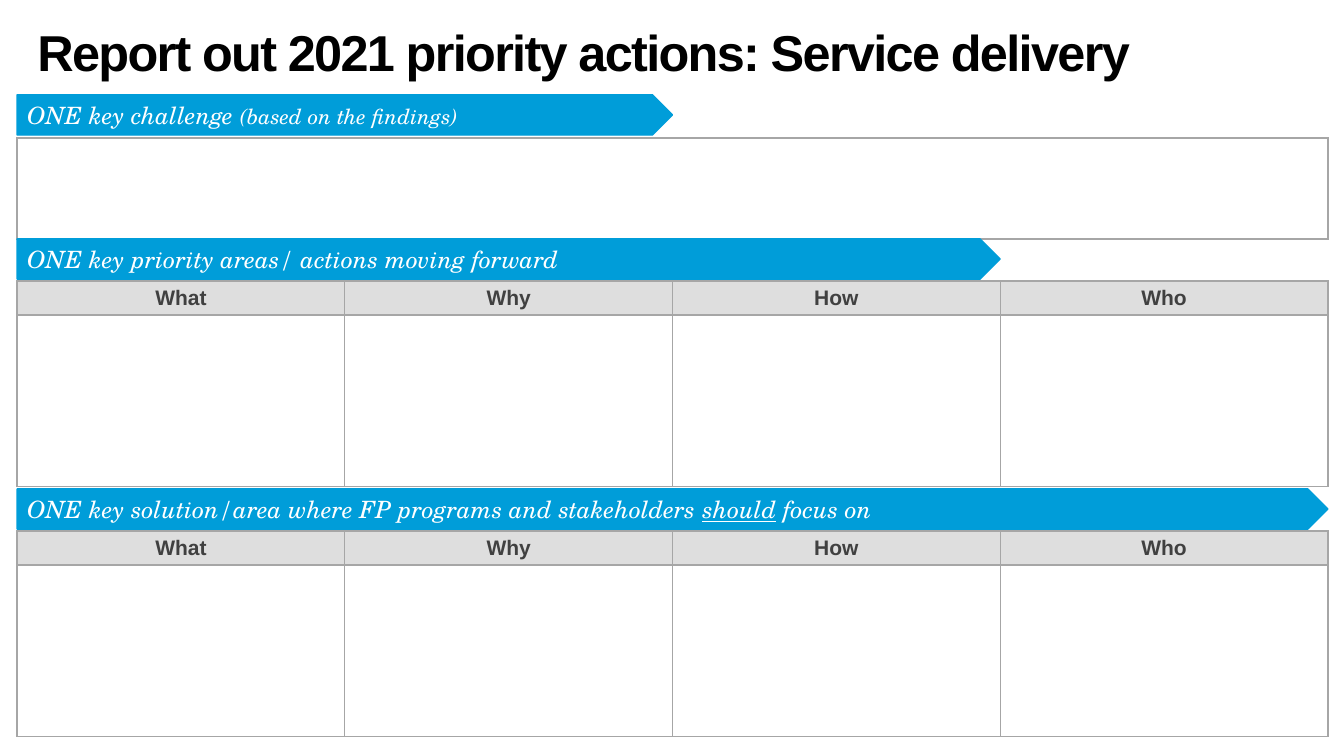
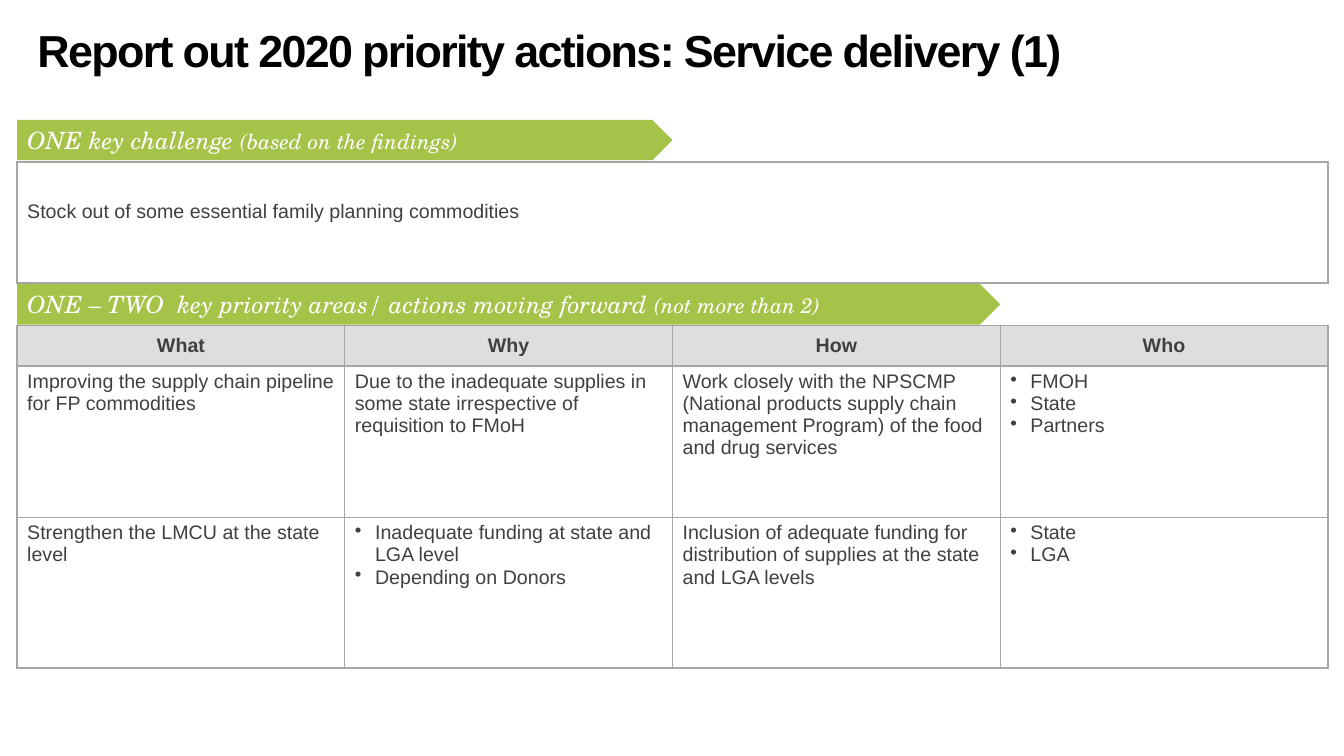
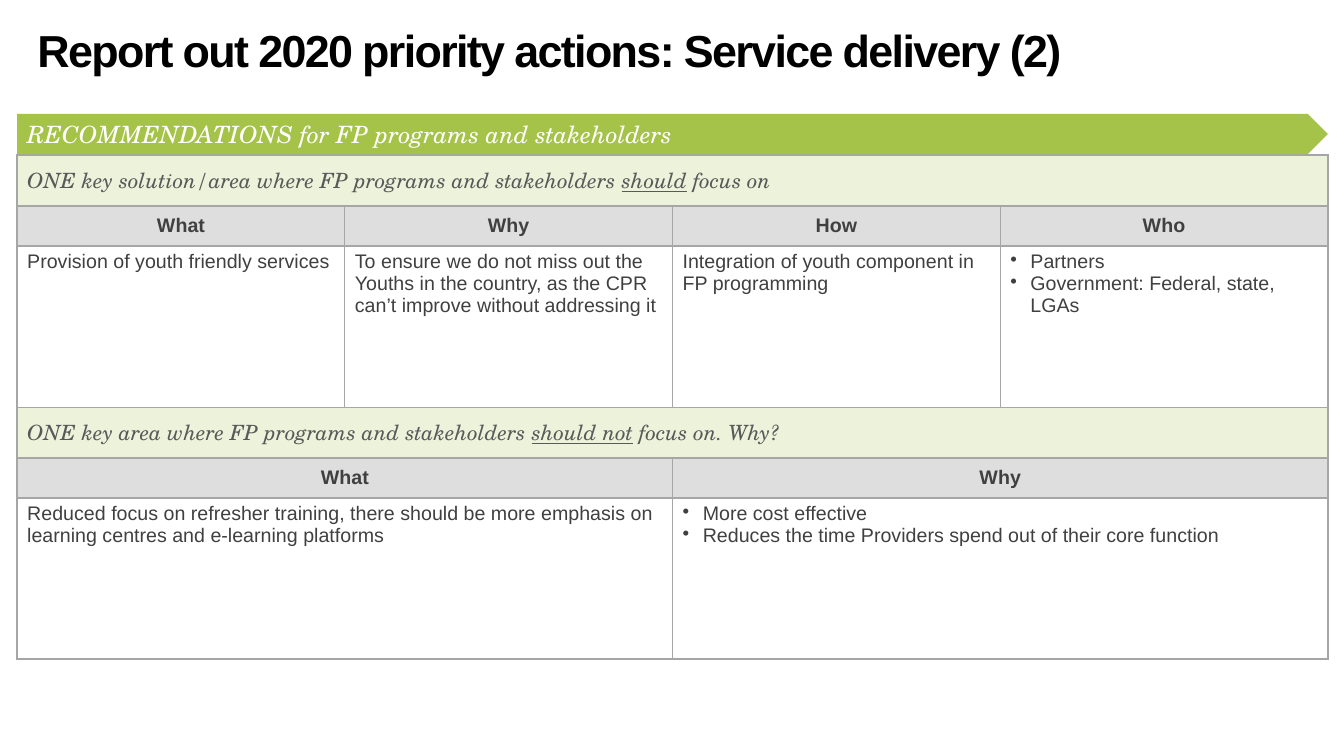
"""Build the report-out slides on service delivery priority actions."""
from dataclasses import dataclass

from lxml.etree import SubElement
from pptx import Presentation
from pptx.dml.color import RGBColor
from pptx.enum.shapes import MSO_SHAPE
from pptx.enum.text import MSO_ANCHOR, MSO_AUTO_SIZE, PP_ALIGN
from pptx.oxml.ns import qn
from pptx.util import Inches, Pt


@dataclass(frozen=True)
class Theme:
    """Colours, fonts and type sizes shared by the slides."""
    ink: str = "000000"
    text: str = "404040"
    muted: str = "595959"
    white: str = "FFFFFF"
    blue: str = "009DD9"
    green: str = "A5C249"
    pale_green: str = "EDF3DB"
    grey: str = "DEDEDE"
    border: str = "A6A6A6"
    sans: str = "Arial"
    serif: str = "TeX Gyre Schola"
    body_size: int = 14
    note_size: int = 15
    banner_size: int = 17
    thick: float = 1.5
    thin: float = 0.75


@dataclass(frozen=True)
class Run:
    """Stretch of text that departs from its paragraph's style."""
    text: str
    size: int = None
    underline: bool = None


@dataclass(frozen=True)
class Row:
    """Table row whose cells share the table's columns equally."""
    kind: str
    height: float
    cells: tuple


THEME = Theme()
LEFT, COLUMN, COLUMNS = 0.17, 3.25, 4
BANNER_HEIGHT = 0.4
HEADINGS = ("What", "Why", "How", "Who")
CHALLENGE = ("ONE key challenge ", Run("(based on the findings)", size=THEME.note_size))
SOLUTION = ("ONE key solution/area where FP programs and stakeholders ",
            Run("should", underline=True), " focus on")
AVOID = ("ONE key area where FP programs and stakeholders ",
         Run("should not", underline=True), " focus on. Why?")
CELL_FILLS = {"head": THEME.grey, "section": THEME.pale_green}


def rgb(code):
    """Turn a hex code into a colour."""
    return RGBColor.from_string(code)


def style_font(paragraph, name, size, color, bold=False, italic=False):
    """Set the font of a whole paragraph."""
    font = paragraph.font
    font.name, font.size, font.bold, font.italic = name, Pt(size), bold, italic
    font.color.rgb = rgb(color)


def add_runs(paragraph, content):
    """Write a string, or a tuple of strings and runs, into a paragraph."""
    for part in (content,) if isinstance(content, str) else content:
        part = Run(part) if isinstance(part, str) else part
        run = paragraph.add_run()
        run.text = part.text
        if part.size:
            run.font.size = Pt(part.size)
        if part.underline:
            run.font.underline = True


def add_bullet(paragraph):
    """Give a paragraph a hanging bullet."""
    properties = paragraph._p.get_or_add_pPr()
    properties.set("marL", str(Inches(0.2)))
    properties.set("indent", str(-Inches(0.2)))
    SubElement(properties, qn("a:buChar")).set("char", "•")


def start_slide(deck, heading, size, top, height):
    """Add a slide with its formatted title."""
    slide = deck.slides.add_slide(deck.slide_layouts[5])
    title = slide.shapes.title
    title.left, title.top = Inches(0.27), Inches(top)
    title.width, title.height = Inches(12.8), Inches(height)
    frame = title.text_frame
    frame.auto_size, frame.word_wrap = MSO_AUTO_SIZE.NONE, True
    frame.vertical_anchor = MSO_ANCHOR.TOP
    paragraph = frame.paragraphs[0]
    paragraph.alignment, paragraph.line_spacing = PP_ALIGN.LEFT, 0.9
    add_runs(paragraph, heading)
    style_font(paragraph, THEME.sans, size, THEME.ink, bold=True)
    paragraph.runs[0]._r.get_or_add_rPr().set("spc", "-120")
    return slide


def add_banner(slide, top, columns, content, color, outlined=False):
    """Add an arrow-shaped section heading spanning some columns."""
    banner = slide.shapes.add_shape(
        MSO_SHAPE.PENTAGON, Inches(LEFT), Inches(top),
        Inches(columns * COLUMN), Inches(BANNER_HEIGHT))
    banner.shadow.inherit = False
    banner.fill.solid()
    banner.fill.fore_color.rgb = rgb(color)
    if outlined:
        banner.line.color.rgb = rgb(color)
        banner.line.width = Pt(1)
    else:
        banner.line.fill.background()
    banner.text_frame.word_wrap = True
    banner.text_frame.vertical_anchor = MSO_ANCHOR.MIDDLE
    paragraph = banner.text_frame.paragraphs[0]
    paragraph.alignment = PP_ALIGN.LEFT
    add_runs(paragraph, content)
    style_font(paragraph, THEME.serif, THEME.banner_size, THEME.white, italic=True)


def set_borders(cell, widths):
    """Draw the left, right, top and bottom borders of a cell."""
    properties = cell._tc.get_or_add_tcPr()
    for side, width in zip("LRTB", widths):
        line = SubElement(properties, qn(f"a:ln{side}"), w=str(Pt(width)))
        fill = SubElement(line, qn("a:solidFill"))
        SubElement(fill, qn("a:srgbClr"), val=THEME.border)


def write_cell(cell, kind, content, head_size):
    """Write a cell's text in the style of its row; a list becomes bullets."""
    cell.vertical_anchor = MSO_ANCHOR.TOP if kind == "body" else MSO_ANCHOR.MIDDLE
    entries = content if isinstance(content, list) else [content]
    for index, entry in enumerate(entries):
        frame = cell.text_frame
        paragraph = frame.add_paragraph() if index else frame.paragraphs[0]
        if isinstance(content, list):
            add_bullet(paragraph)
        add_runs(paragraph, entry)
        if kind == "section":
            style_font(paragraph, THEME.serif, THEME.note_size, THEME.muted, italic=True)
        elif kind == "head":
            paragraph.alignment = PP_ALIGN.CENTER
            style_font(paragraph, THEME.sans, head_size, THEME.text, bold=True)
        else:
            style_font(paragraph, THEME.sans, THEME.body_size, THEME.text)


def add_grid(slide, top, rows, columns=COLUMNS, head_size=THEME.body_size, foot=THEME.thick):
    """Add a bordered table, thick at its edges and below its headings."""
    width = COLUMN * COLUMNS
    table = slide.shapes.add_table(
        len(rows), columns, Inches(LEFT), Inches(top),
        Inches(width), Inches(sum(row.height for row in rows))).table
    table.first_row = table.horz_banding = False
    for column in table.columns:
        column.width = Inches(width / columns)
    above = THEME.thick
    for index, row in enumerate(rows):
        table.rows[index].height = Inches(row.height)
        last = index == len(rows) - 1
        below = foot if last else THEME.thin if row.kind == "body" else THEME.thick
        span = columns // len(row.cells)
        for start, content in zip(range(0, columns, span), row.cells):
            end = start + span - 1
            sides = (THEME.thin if start else THEME.thick,
                     THEME.thin if end < columns - 1 else THEME.thick)
            if span > 1:
                table.cell(index, start).merge(table.cell(index, end))
            for position in range(start, end + 1):
                cell = table.cell(index, position)
                set_borders(cell, (*sides, above, below))
                if row.kind in CELL_FILLS:
                    cell.fill.solid()
                    cell.fill.fore_color.rgb = rgb(CELL_FILLS[row.kind])
                else:
                    cell.fill.background()
            if content:
                write_cell(table.cell(index, start), row.kind, content, head_size)
        above = below
    return table


def build_blank_report(deck):
    """Build the 2021 form, left open for answers."""
    slide = start_slide(deck, "Report out 2021 priority actions: Service delivery",
                        36, 0.23, 0.65)
    add_banner(slide, 0.94, 2, CHALLENGE, THEME.blue, outlined=True)
    add_grid(slide, 1.37, [Row("note", 1, ("",))], columns=1)
    sections = ((2.37, 3, "ONE key priority areas/ actions moving forward"),
                (4.85, 4, SOLUTION))
    for top, columns, heading in sections:
        add_banner(slide, top, columns, heading, THEME.blue, outlined=True)
        add_grid(slide, top + 0.42,
                 [Row("head", 0.3, HEADINGS), Row("body", 1.7, ("",) * COLUMNS)],
                 head_size=THEME.note_size, foot=THEME.thin)


def build_priorities(deck):
    """Build the 2020 challenge and priority actions."""
    slide = start_slide(deck, "Report out 2020 priority actions: Service delivery (1)",
                        32, 0.24, 0.7)
    add_banner(slide, 1.19, 2, CHALLENGE, THEME.green)
    challenge = add_grid(slide, 1.61, [
        Row("note", 1.2, ("Stock out of some essential family planning commodities",)),
    ], columns=1)
    challenge.cell(0, 0).margin_bottom = Inches(0.27)
    add_banner(slide, 2.82, 3, (
        "ONE – TWO  key priority areas/ actions moving forward ",
        Run("(not more than 2)", size=THEME.note_size)), THEME.green)
    add_grid(slide, 3.23, [
        Row("head", 0.4, HEADINGS),
        Row("body", 1.5, (
            "Improving the supply chain pipeline for FP commodities",
            "Due to the inadequate supplies in some state irrespective of  requisition to FMoH",
            "Work closely with the NPSCMP (National products supply chain management "
            "Program) of the food and drug services",
            ["FMOH", "State", "Partners"])),
        Row("body", 1.5, (
            "Strengthen the LMCU at the state level",
            ["Inadequate funding at state and LGA level", "Depending on Donors"],
            "Inclusion of adequate funding for distribution of supplies at the state "
            "and LGA levels",
            ["State", "LGA"])),
    ])


def build_recommendations(deck):
    """Build the 2020 recommendations."""
    slide = start_slide(deck, "Report out 2020 priority actions: Service delivery (2)",
                        32, 0.24, 0.7)
    add_grid(slide, 1.54, [
        Row("section", 0.5, (SOLUTION,)),
        Row("head", 0.4, HEADINGS),
        Row("body", 1.6, (
            "Provision of youth friendly services",
            "To ensure we do not miss out the Youths in the country, as the CPR "
            "can’t improve without addressing it",
            "Integration of youth component in FP programming",
            ["Partners", "Government: Federal, state, LGAs"])),
        Row("section", 0.5, (AVOID,)),
        Row("head", 0.4, HEADINGS[:2]),
        Row("body", 1.6, (
            "Reduced focus on refresher training, there should be more emphasis on "
            "learning centres and e-learning platforms",
            ["More cost effective",
             "Reduces the time Providers spend out of their core function"])),
    ])
    add_banner(slide, 1.13, 4, "RECOMMENDATIONS for FP programs and stakeholders", THEME.green)


def main():
    """Build and save the deck."""
    deck = Presentation()
    deck.slide_width, deck.slide_height = Inches(13.33), Inches(7.5)
    build_blank_report(deck)
    build_priorities(deck)
    build_recommendations(deck)
    deck.save("out.pptx")


if __name__ == "__main__":
    main()
